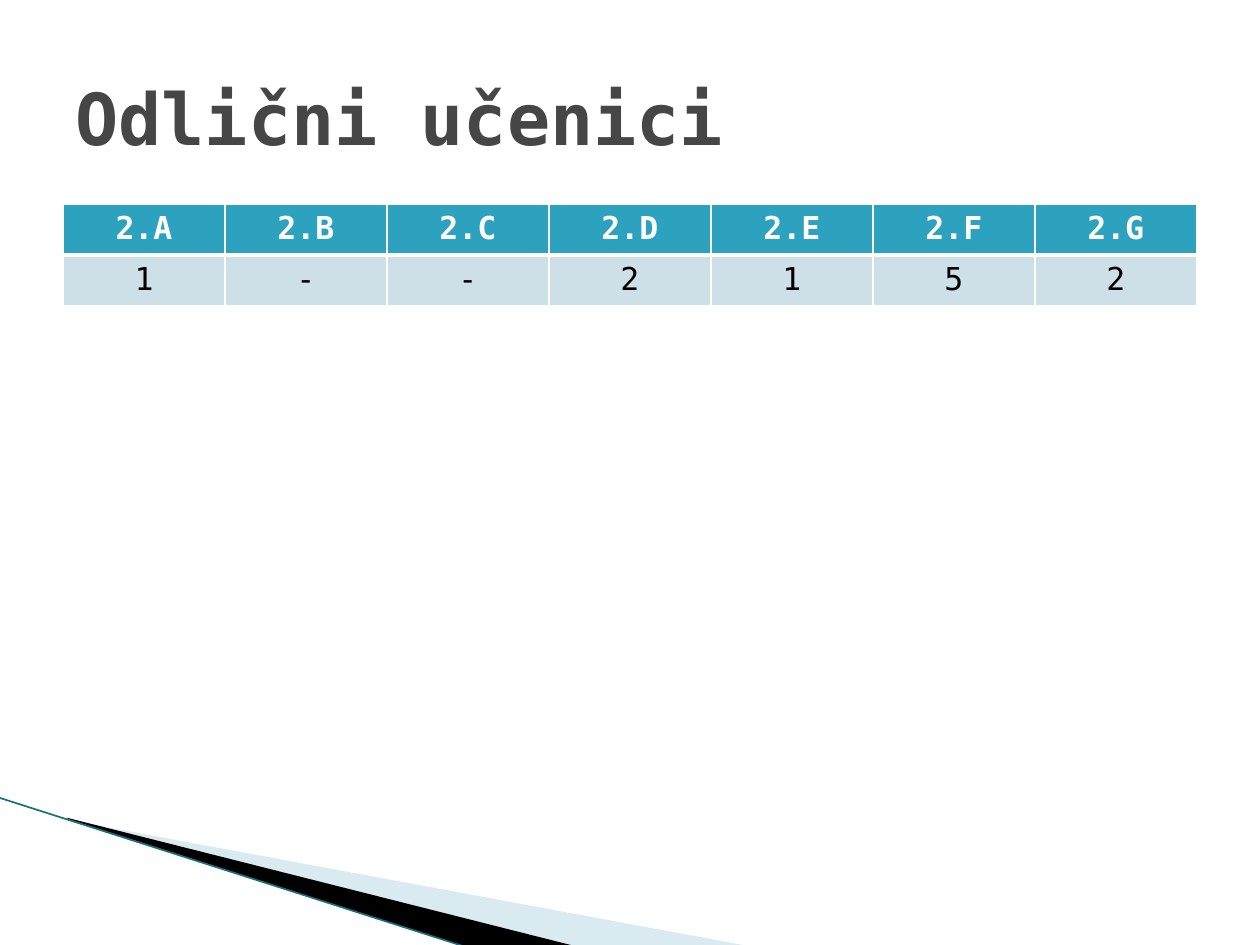
from lxml import etree
from pptx import Presentation
from pptx.dml.color import RGBColor
from pptx.enum.shapes import MSO_CONNECTOR
from pptx.enum.text import MSO_ANCHOR, PP_ALIGN
from pptx.oxml.ns import qn
from pptx.util import Inches, Pt

TITLE = "Odlični učenici"
ROWS = [
    ["2.A", "2.B", "2.C", "2.D", "2.E", "2.F", "2.G"],
    ["1", "-", "-", "2", "1", "5", "2"],
]

FONT = "DejaVu Sans Mono"
WHITE = RGBColor(0xFF, 0xFF, 0xFF)
BLACK = RGBColor(0, 0, 0)
GREY = RGBColor(0x46, 0x46, 0x46)
TEAL = RGBColor(0x2D, 0xA2, 0xBF)
DEEP = RGBColor(0x1B, 0x6E, 0x80)
PALE = RGBColor(0xCD, 0xE0, 0xE8)
SKY = RGBColor(0xA0, 0xCB, 0xDC)
LEFT, CENTER = PP_ALIGN.LEFT, PP_ALIGN.CENTER
MIDDLE = MSO_ANCHOR.MIDDLE
STRAIGHT = MSO_CONNECTOR.STRAIGHT

WIDTH, HEIGHT = 10, 7.5
MARGIN = WIDTH * 0.05
SPAN = WIDTH - 2 * MARGIN
GRID_H = 0.81

# Corner wedges: frame and points in inches, colour, opacity in percent
WEDGES = [
    ((0.78, 5.47, 4.16, 1.58),
     [(0.55, 6.51), (5.95, 7.51), (4.56, 7.51), (0.55, 6.5)], SKY, 40),
    ((-0.06, 6.33, 4.16, 0.92),
     [(0.53, 6.49), (4.57, 7.51), (3.72, 7.52), (0.54, 6.5)], BLACK, 100),
]
EDGE = [(-0.01, 6.33), (3.71, 7.52)]


def write(frame, text, size, color, bold=False, align=LEFT):
    para = frame.paragraphs[0]
    para.alignment = align
    run = para.add_run()
    run.text = text
    font = run.font
    font.name, font.size, font.bold = FONT, Pt(size), bold
    font.color.rgb = color


def set_frame(shape, frame):
    """Give a freeform a new frame while its outline stays in place."""
    left, top, width, height = (Inches(v) for v in frame)
    dx, dy = shape.left - left, shape.top - top
    outline = shape._element.spPr.find(".//" + qn("a:path"))
    for spot in outline.iter(qn("a:pt")):
        spot.set("x", str(int(spot.get("x")) + dx))
        spot.set("y", str(int(spot.get("y")) + dy))
    outline.set("w", str(width))
    outline.set("h", str(height))
    shape.left, shape.top, shape.width, shape.height = left, top, width, height


def add_wedge(shapes, frame, points, color, alpha):
    spots = [(Inches(x), Inches(y)) for x, y in points]
    pen = shapes.build_freeform(*spots[0], scale=1.0)
    pen.add_line_segments(spots[1:], close=True)
    wedge = pen.convert_to_shape()
    set_frame(wedge, frame)
    wedge.shadow.inherit = False
    wedge.fill.solid()
    wedge.fill.fore_color.rgb = color
    wedge.line.fill.background()
    if alpha < 100:
        tint = wedge.fill._xPr.find(".//" + qn("a:srgbClr"))
        etree.SubElement(tint, qn("a:alpha"), val=str(alpha * 1000))


def add_edge(shapes):
    (x1, y1), (x2, y2) = EDGE
    edge = shapes.add_connector(STRAIGHT, Inches(x1), Inches(y1), Inches(x2), Inches(y2))
    edge.line.color.rgb = DEEP
    edge.line.width = Pt(0.95)
    etree.SubElement(edge._element.spPr, qn("a:effectLst"))


def set_borders(cell, widths):
    """Draw white borders; widths are points for left, right, top, bottom."""
    props = cell._tc.get_or_add_tcPr()
    for spot, (side, width) in enumerate(zip("LRTB", widths)):
        line = etree.Element(qn("a:ln" + side), w=str(Pt(width)))
        fill = etree.SubElement(line, qn("a:solidFill"))
        etree.SubElement(fill, qn("a:srgbClr"), val=str(WHITE))
        props.insert(spot, line)


def add_grid(shapes):
    count = len(ROWS[0])
    table = shapes.add_table(
        len(ROWS), count, Inches(MARGIN), Inches(1.62),
        Inches(SPAN), Inches(GRID_H)).table
    for col in table.columns:
        col.width = Inches(SPAN / count)
    for r, row in enumerate(ROWS):
        head = r == 0
        for c, text in enumerate(row):
            cell = table.cell(r, c)
            cell.fill.solid()
            cell.fill.fore_color.rgb = TEAL if head else PALE
            set_borders(cell, (1, 1, 1, 3 if head else 1))
            write(cell.text_frame, text, 18, WHITE if head else BLACK,
                  bold=head, align=CENTER)


def add_title(shapes):
    box = shapes.add_textbox(Inches(MARGIN), Inches(0.3), Inches(SPAN), Inches(1.25))
    frame = box.text_frame
    frame.word_wrap = True
    frame.vertical_anchor = MIDDLE
    write(frame, TITLE, 41, GREY, bold=True)


def main():
    deck = Presentation()
    deck.slide_width, deck.slide_height = Inches(WIDTH), Inches(HEIGHT)
    shapes = deck.slides.add_slide(deck.slide_layouts[6]).shapes
    for wedge in WEDGES:
        add_wedge(shapes, *wedge)
    add_edge(shapes)
    add_grid(shapes)
    add_title(shapes)
    deck.save("out.pptx")


if __name__ == "__main__":
    main()
